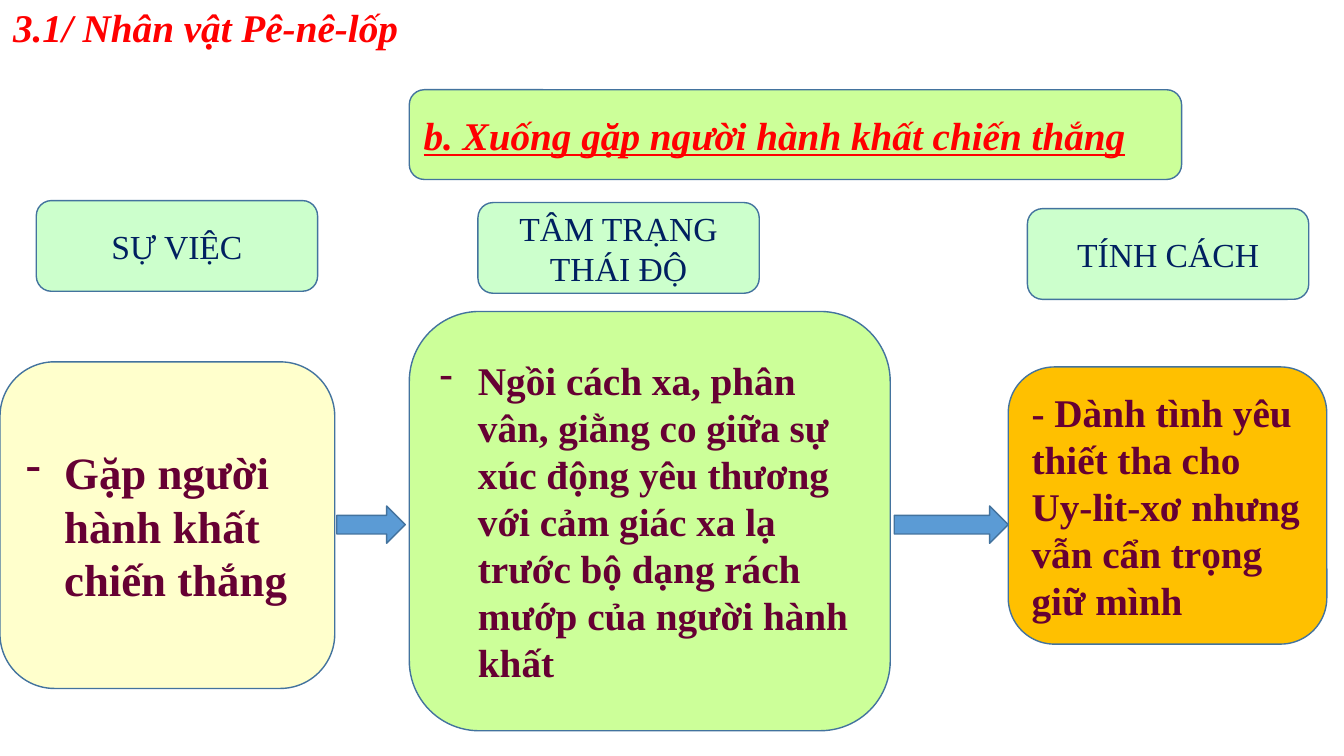
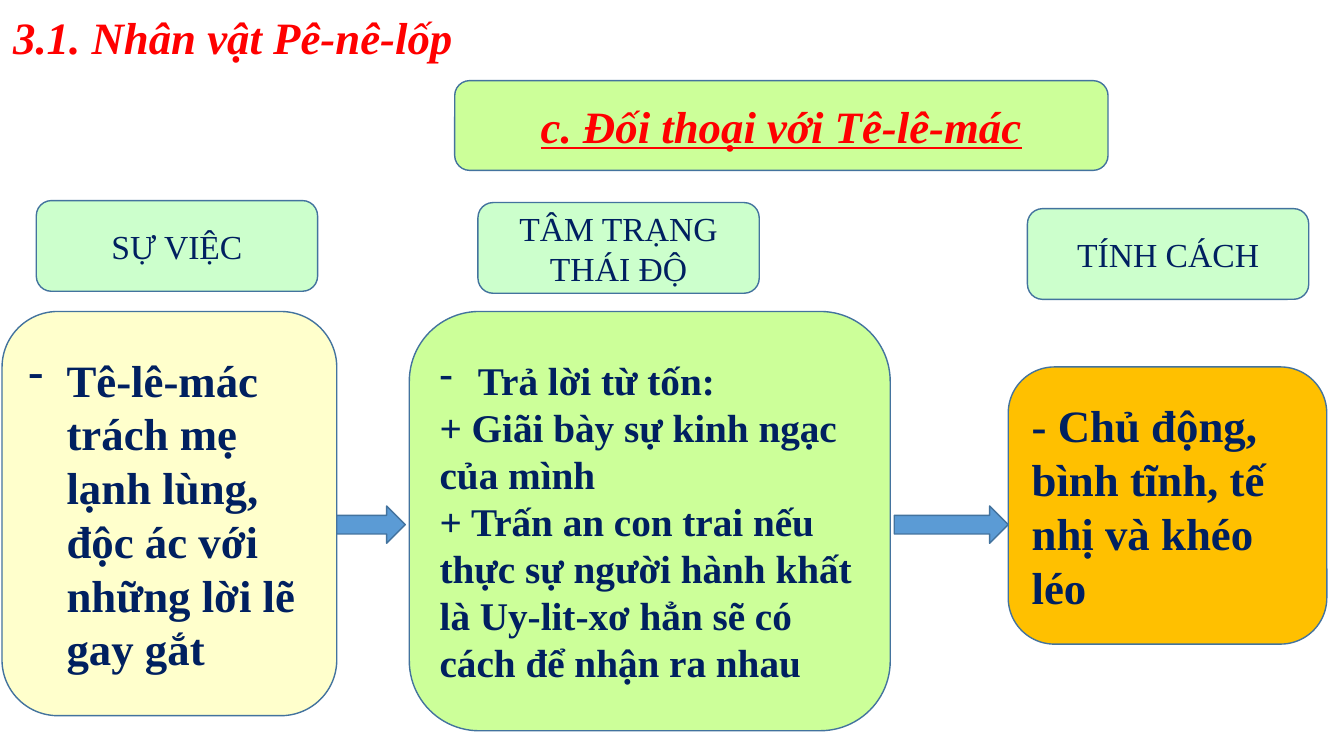
from pptx import Presentation
from pptx.dml.color import RGBColor
from pptx.enum.shapes import MSO_SHAPE
from pptx.enum.text import MSO_ANCHOR, MSO_AUTO_SIZE, PP_ALIGN
from pptx.oxml.ns import qn
from pptx.util import Emu, Pt
from lxml import etree

ROUNDED = MSO_SHAPE.ROUNDED_RECTANGLE
RIGHT_ARROW = MSO_SHAPE.RIGHT_ARROW
MIDDLE = MSO_ANCHOR.MIDDLE
LEFT, CENTER = PP_ALIGN.LEFT, PP_ALIGN.CENTER
NO_FIT = MSO_AUTO_SIZE.NONE

RED = RGBColor(0xFF, 0x00, 0x00)
NAVY = RGBColor(0x00, 0x20, 0x60)
MAROON = RGBColor(0x66, 0x00, 0x33)
LIME = RGBColor(0xCC, 0xFF, 0x99)
MINT = RGBColor(0xCC, 0xFF, 0xCC)
CREAM = RGBColor(0xFF, 0xFF, 0xCC)
AMBER = RGBColor(0xFF, 0xC0, 0x00)
BLUE = RGBColor(0x5B, 0x9B, 0xD5)
OUTLINE = RGBColor(0x43, 0x73, 0x9E)

FONT = "Times New Roman"
PX = 9144  # 100 px to the inch
BULLET_INDENT = 38
TITLE_LAYOUT = 5

# Column headings: text, left, top
HEADING_SIZE = (279, 90)
HEADINGS = [
    ("SỰ VIỆC", 36, 199),
    ("TÂM TRẠNG THÁI ĐỘ", 474, 201),
    ("TÍNH CÁCH", 1019, 207),
]
# Boxes and arrows: left, top, width, height
ATTITUDE_AREA = (406, 309, 477, 416)
TRAIT_AREA = (1000, 364, 316, 275)
ARROW_AREAS = [(334, 502, 68, 37), (887, 502, 113, 37)]

# Each body entry: (paragraphs, size); a paragraph is (text, bulleted)
SLIDES = [
    {
        "title": ("3.1/ Nhân vật Pê-nê-lốp", 28, (0, 0, 569, 53)),
        "topic": ("b. Xuống gặp người hành khất chiến thắng", 28, LEFT,
                  (406, 89, 766, 89)),
        "color": MAROON,
        "event_area": (0, 359, 332, 324),
        "event": ([("Gặp người hành khất chiến thắng", True)], 32),
        "attitude": ([("Ngồi cách xa, phân vân, giằng co giữa sự xúc động "
                       "yêu thương với cảm giác xa lạ trước bộ dạng rách "
                       "mướp của người hành khất", True)], 28),
        "trait": ([("- Dành tình yêu thiết tha cho Uy-lit-xơ nhưng vẫn "
                    "cẩn trọng giữ mình", False)], 28),
    },
    {
        "title": ("3.1. Nhân vật Pê-nê-lốp", 32, (0, 3, 569, 67)),
        "topic": ("c. Đối thoại với Tê-lê-mác", 32, CENTER,
                  (451, 80, 648, 89)),
        "color": NAVY,
        "event_area": (2, 309, 332, 401),
        "event": ([("Tê-lê-mác trách mẹ lạnh lùng, độc ác với những lời "
                    "lẽ gay gắt", True)], 32),
        "attitude": ([("Trả lời từ tốn:", True),
                      ("+ Giãi bày sự kinh ngạc của mình", False),
                      ("+ Trấn an con trai nếu thực sự người hành khất là "
                       "Uy-lit-xơ hẳn sẽ có cách để nhận ra nhau", False)],
                     28),
        "trait": ([("- Chủ động, bình tĩnh, tế nhị và khéo léo", False)], 32),
    },
]


def px(length):
    return Emu(length * PX)


def style_paragraph(paragraph, size, color, align=LEFT, bold=True,
                    italic=False, underline=False):
    paragraph.alignment = align
    font = paragraph.font
    font.name, font.size = FONT, Pt(size)
    font.color.rgb = color
    font.bold, font.italic, font.underline = bold, italic, underline


def add_bullet(paragraph):
    properties = paragraph._p.get_or_add_pPr()
    properties.set("marL", str(px(BULLET_INDENT)))
    properties.set("indent", str(-px(BULLET_INDENT)))
    # Bullet elements come before the default run properties
    bullet_font = etree.Element(qn("a:buFontTx"))
    bullet_char = etree.Element(qn("a:buChar"), char="-")
    properties.insert(0, bullet_font)
    bullet_font.addnext(bullet_char)


def add_block(slide, kind, area, fill):
    block = slide.shapes.add_shape(kind, *map(px, area))
    block.shadow.inherit = False
    block.fill.solid()
    block.fill.fore_color.rgb = fill
    block.line.color.rgb = OUTLINE
    block.line.width = Pt(1)
    return block


def add_box(slide, area, fill, paragraphs, size, color, **style):
    frame = add_block(slide, ROUNDED, area, fill).text_frame
    frame.word_wrap = True
    frame.vertical_anchor = MIDDLE
    for index, (text, bulleted) in enumerate(paragraphs):
        paragraph = frame.add_paragraph() if index else frame.paragraphs[0]
        paragraph.text = text
        style_paragraph(paragraph, size, color, **style)
        if bulleted:
            add_bullet(paragraph)


def set_title(slide, text, size, area):
    title = slide.shapes.title
    title.left, title.top, title.width, title.height = map(px, area)
    frame = title.text_frame
    frame.text = text
    frame.auto_size = NO_FIT
    frame.vertical_anchor = MIDDLE
    frame.margin_left = px(13)
    style_paragraph(frame.paragraphs[0], size, RED, italic=True)


def build_slide(deck, content):
    slide = deck.slides.add_slide(deck.slide_layouts[TITLE_LAYOUT])
    set_title(slide, *content["title"])

    # Topic and column headings
    topic, size, align, area = content["topic"]
    add_box(slide, area, LIME, [(topic, False)], size, RED,
            align=align, italic=True, underline=True)
    for heading, left, top in HEADINGS:
        add_box(slide, (left, top, *HEADING_SIZE), MINT, [(heading, False)],
                24, NAVY, align=CENTER, bold=False)

    # Event, attitude and trait, joined by block arrows
    columns = [
        ("event", content["event_area"], CREAM),
        ("attitude", ATTITUDE_AREA, LIME),
        ("trait", TRAIT_AREA, AMBER),
    ]
    for name, area, fill in columns:
        add_box(slide, area, fill, *content[name], content["color"])
    for area in ARROW_AREAS:
        add_block(slide, RIGHT_ARROW, area, BLUE)


def main():
    deck = Presentation()
    deck.slide_width, deck.slide_height = px(1333), px(750)
    for content in SLIDES:
        build_slide(deck, content)
    deck.save("out.pptx")


if __name__ == "__main__":
    main()
